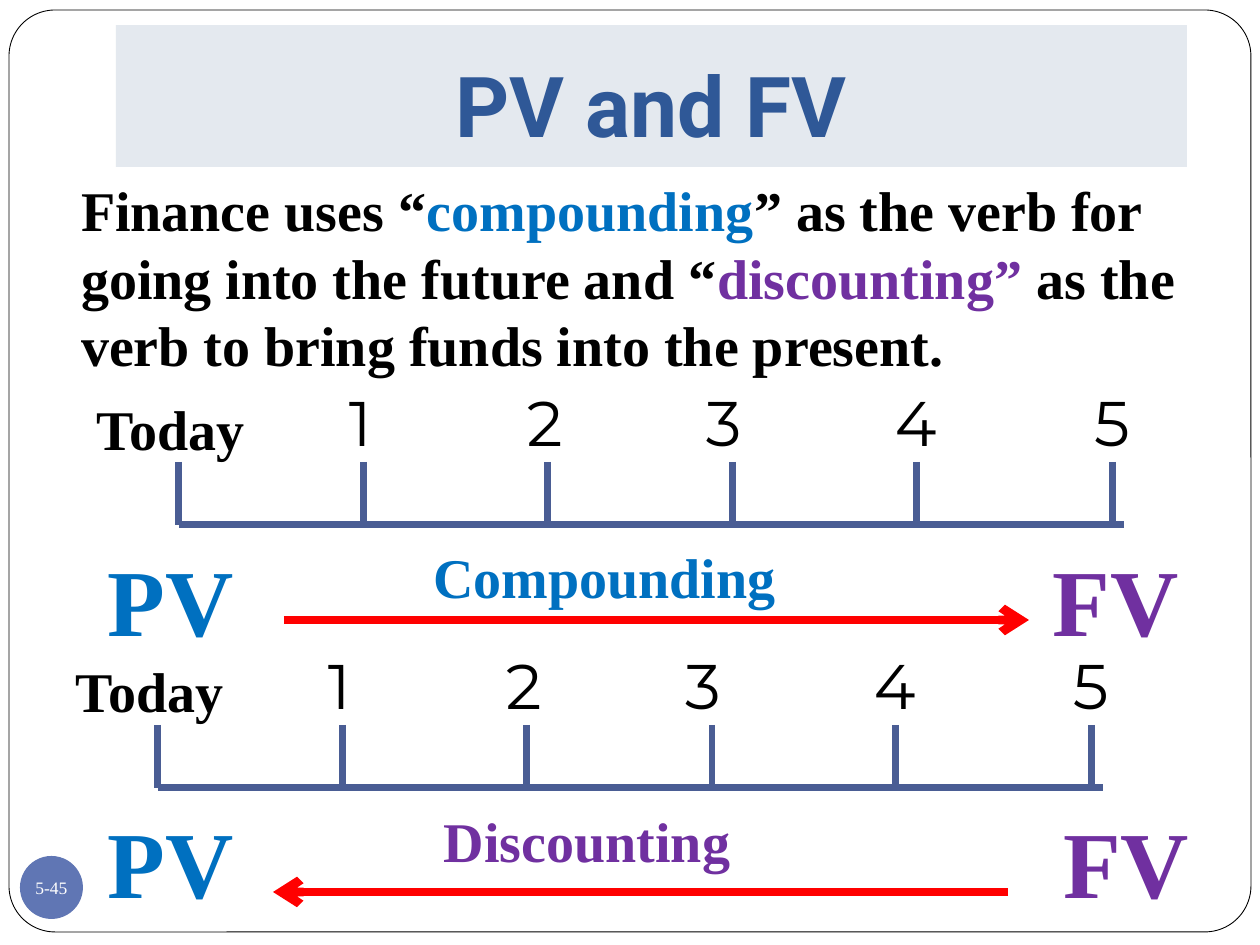
from lxml import etree
from pptx import Presentation
from pptx import util as u
from pptx.dml.color import RGBColor
from pptx.enum import shapes, text
from pptx.oxml.ns import qn

SERIF, SANS, TITLE = "Times New Roman", "Montserrat", "Roboto"
BLACK, WHITE, BLUE, PURPLE = "000000", "FFFFFF", "0070C0", "7030A0"
AXIS, RED = "4A5D94", "FF0000"

SENTENCE = [
    ("Finance uses “", BLACK),
    ("compounding", BLUE),
    ("” as the verb for going into the future and “", BLACK),
    ("discounting”", PURPLE),
    (" as the verb to bring funds into the present.", BLACK),
]
TIMELINES = [(179, 525), (158, 788)]
AXIS_LENGTH, TICK_HEIGHT = 945, 63
TICKS = [0, 185, 369, 554, 738, 934]
PERIODS = [("1", 157, 68), ("2", 335, 73), ("3", 514, 84), ("4", 703, 73), ("5", 902, 68)]
CAPTIONS = [
    ("PV", BLUE, 54, (95, 536, 242, 127)),
    ("FV", PURPLE, 54, (1040, 536, 168, 127)),
    ("Compounding", BLUE, 32, (420, 536, 546, 81)),
    ("PV", BLUE, 54, (95, 798, 242, 127)),
    ("FV", PURPLE, 54, (1050, 798, 168, 127)),
    ("Discounting", PURPLE, 32, (431, 800, 494, 81)),
]
ARROWS = [(284, 1029, 620), (1008, 273, 892)]


def px(value):
    return u.Emu(round(value * 914400 / 126))


def color(value):
    return RGBColor.from_string(value)


def write(box, spans, size=32, font=SERIF, bold=True, align=text.PP_ALIGN.LEFT,
          anchor=text.MSO_ANCHOR.TOP, margins=(13, 6, 13, 6), wrap=True):
    frame = box.text_frame
    frame.word_wrap = wrap
    frame.vertical_anchor = anchor
    (frame.margin_left, frame.margin_top,
     frame.margin_right, frame.margin_bottom) = map(px, margins)
    para = frame.paragraphs[0]
    para.alignment = align
    for words, shade in spans:
        span = para.add_run()
        span.text = words
        span.font.size = u.Pt(size)
        span.font.name = font
        span.font.bold = bold
        span.font.color.rgb = color(shade)


def add_text(parent, area, spans, **style):
    write(parent.add_textbox(*map(px, area)), spans, **style)


def add_panel(parent, kind, area, fill, line=None):
    panel = parent.add_shape(kind, *map(px, area))
    panel.shadow.inherit = False
    panel.fill.solid()
    panel.fill.fore_color.rgb = color(fill)
    if line:
        panel.line.color.rgb = color(line)
        panel.line.width = u.Pt(0.5)
    else:
        panel.line.fill.background()
    return panel


def add_line(parent, ends, shade, width, arrow=False):
    line = parent.add_connector(shapes.MSO_CONNECTOR.STRAIGHT, *map(px, ends))
    line.line.color.rgb = color(shade)
    line.line.width = u.Pt(width)
    if arrow:
        etree.SubElement(line.line._get_or_add_ln(), qn("a:tailEnd"), type="arrow")
    etree.SubElement(line._element.spPr, qn("a:effectLst"))


def add_timeline(page, left, base):
    parts = page.shapes.add_group_shape().shapes
    add_line(parts, (left, base, left + AXIS_LENGTH, base), AXIS, 4)
    for tick in TICKS:
        add_line(parts, (left + tick, base - TICK_HEIGHT, left + tick, base), AXIS, 4)
    add_text(parts, (left - 95, base - 137, 220, 81), [("Today", BLACK)])
    for label, offset, width in PERIODS:
        add_text(parts, (left + offset, base - 147, width, 89), [(label, BLACK)],
                 size=36, font=SANS, bold=False)


def main():
    """Build the present and future value slide."""
    deck = Presentation()
    deck.slide_width, deck.slide_height = px(1260), px(945)
    page = deck.slides.add_slide(deck.slide_layouts[6])
    kinds = shapes.MSO_SHAPE
    center, middle = text.PP_ALIGN.CENTER, text.MSO_ANCHOR.MIDDLE

    border = add_panel(page.shapes, kinds.ROUNDED_RECTANGLE, (9, 10, 1242, 922), WHITE, BLACK)
    border.adjustments[0] = 0.05
    badge = add_panel(page.shapes, kinds.OVAL, (20, 856, 63, 63), "6076B4")
    write(badge, [("5-45", WHITE)], size=10, bold=False, align=center, anchor=middle,
          margins=(0, 0, 0, 0), wrap=False)
    title = add_panel(page.shapes, kinds.RECTANGLE, (116, 25, 1071, 142), "E4E9EF")
    write(title, [("PV and FV", "2F5897")], size=48, font=TITLE, align=center,
          anchor=text.MSO_ANCHOR.BOTTOM, margins=(13, 6, 13, 13))
    add_text(page.shapes, (68, 170, 1176, 217), SENTENCE)

    for left, base in TIMELINES:
        add_timeline(page, left, base)
    for words, shade, size, area in CAPTIONS:
        add_text(page.shapes, area, [(words, shade)], size=size)
    for start, end, level in ARROWS:
        add_line(page.shapes, (start, level, end, level), RED, 5, arrow=True)
    deck.save("out.pptx")


if __name__ == "__main__":
    main()
